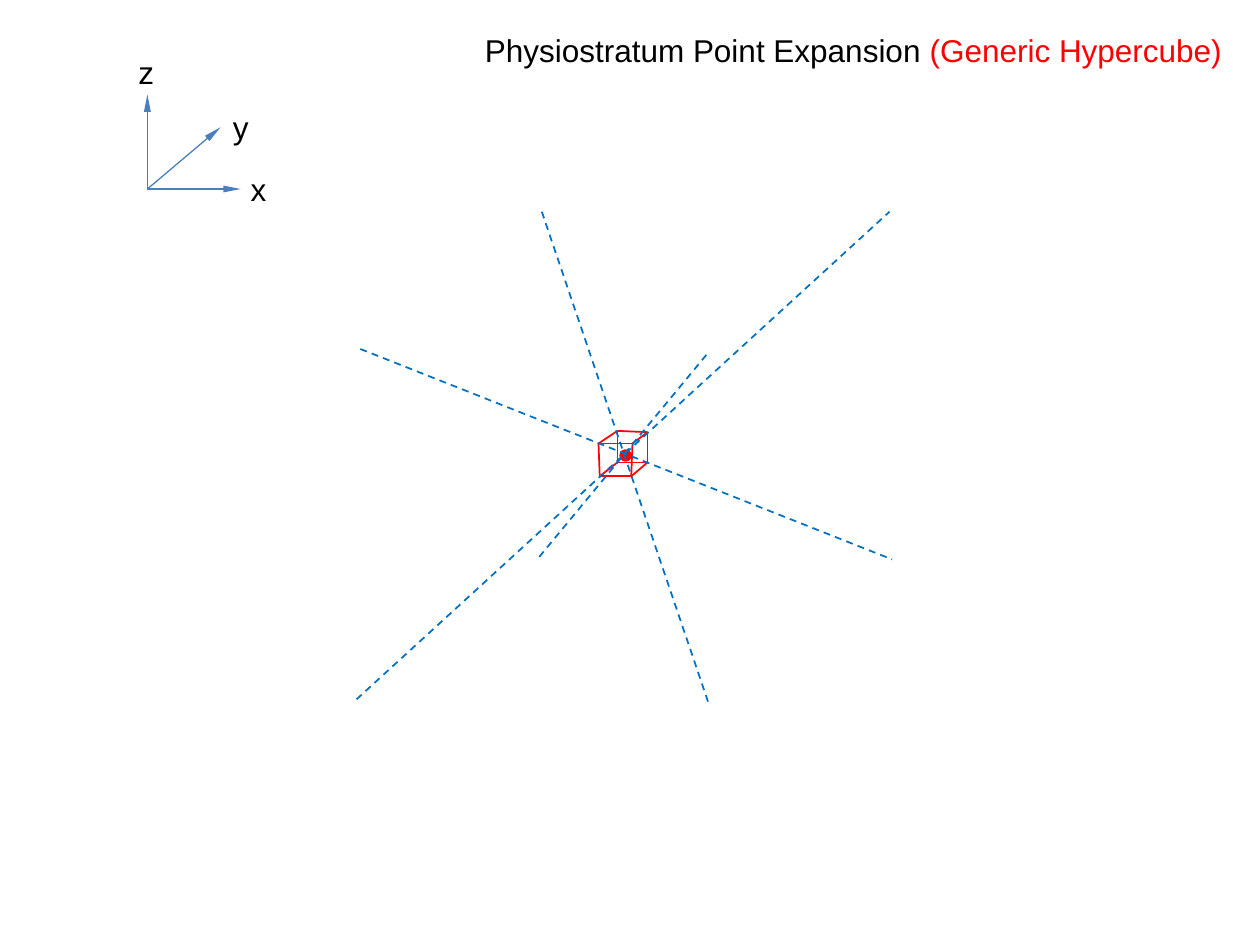
import pptx
import pptx.util
import pptx.dml.color
import pptx.enum.dml
import pptx.enum.shapes
import pptx.enum.text
from lxml import etree
from pptx.oxml.ns import qn
from pptx.util import Inches, Pt

COLORS = {"red": "FF0000", "ray": "0070C0", "axis": "4B7EBC", "text": "000000"}

# Corners run clockwise from the top left.
FRONT = [(4.75, 3.52), (5.02, 3.52), (5.01, 3.78), (4.76, 3.78)]
BACK = [(4.9, 3.42), (5.14, 3.43), (5.14, 3.67), (4.9, 3.67)]
RAYS = [
    ((4.3, 1.68), (5.62, 5.57)),
    ((2.83, 5.55), (7.06, 1.68)),
    ((4.28, 4.42), (5.62, 2.8)),
    ((2.86, 2.77), (7.08, 4.44)),
]
ORIGIN = (1.17, 1.5)
# Axis name, arrow tip, label position
AXES = [
    ("x", (1.91, 1.5), (1.89, 1.3)),
    ("y", (1.75, 1.01), (1.75, 0.81)),
    ("z", (1.17, 0.75), (1, 0.37)),
]


def rgb(name):
    return pptx.dml.color.RGBColor.from_string(COLORS[name])


def add_line(s, start, end, color, width=1, dashed=False, arrow=False):
    line = s.shapes.add_connector(
        pptx.enum.shapes.MSO_CONNECTOR.STRAIGHT,
        *(Inches(v) for v in (*start, *end)))
    line.line.color.rgb = rgb(color)
    line.line.width = Pt(width)
    if dashed:
        line.line.dash_style = pptx.enum.dml.MSO_LINE.DASH
    if arrow:
        etree.SubElement(line.line._get_or_add_ln(), qn("a:tailEnd"),
                         type="triangle", w="sm", len="lg")
    etree.SubElement(line._element.spPr, qn("a:effectLst"))


def add_text(s, left, top, width, runs):
    """Add a one-line text box from (text, color) runs."""
    tf = s.shapes.add_textbox(
        Inches(left), Inches(top), Inches(width), Inches(0.4)).text_frame
    tf.word_wrap = True
    tf.auto_size = pptx.enum.text.MSO_AUTO_SIZE.SHAPE_TO_FIT_TEXT
    p = tf.paragraphs[0]
    p.font.name = "Arial"
    p.font.size = Pt(18)
    for text, color in runs:
        r = p.add_run()
        r.text = text
        r.font.color.rgb = rgb(color)


def add_cube(s):
    for i in range(4):
        add_line(s, FRONT[i - 1], FRONT[i], "red")
        add_line(s, BACK[i - 1], BACK[i], "red")
        add_line(s, FRONT[i], BACK[i], "red")


def add_center_point(s):
    sp = s.shapes.add_shape(
        pptx.enum.shapes.MSO_SHAPE.OVAL,
        Inches(4.93), Inches(3.58), Inches(0.07), Inches(0.07))
    sp.shadow.inherit = False
    sp.fill.solid()
    sp.fill.fore_color.rgb = rgb("red")
    sp.line.color.rgb = rgb("red")
    sp.line.width = Pt(2)


def add_axes(s):
    for name, tip, label in AXES:
        add_line(s, ORIGIN, tip, "axis", width=0.75, arrow=True)
        add_text(s, *label, 0.25, [(name, "text")])


def main():
    prs = pptx.Presentation()
    prs.slide_width, prs.slide_height = Inches(10), Inches(7.5)
    s = prs.slides.add_slide(prs.slide_layouts[6])
    add_cube(s)
    add_center_point(s)
    for start, end in RAYS:
        add_line(s, start, end, "ray", dashed=True)
    add_axes(s)
    add_text(s, 3.75, 0.2, 6.17, [("Physiostratum Point Expansion ", "text"),
                                  ("(Generic Hypercube)", "red")])
    prs.save("out.pptx")


if __name__ == "__main__":
    main()
